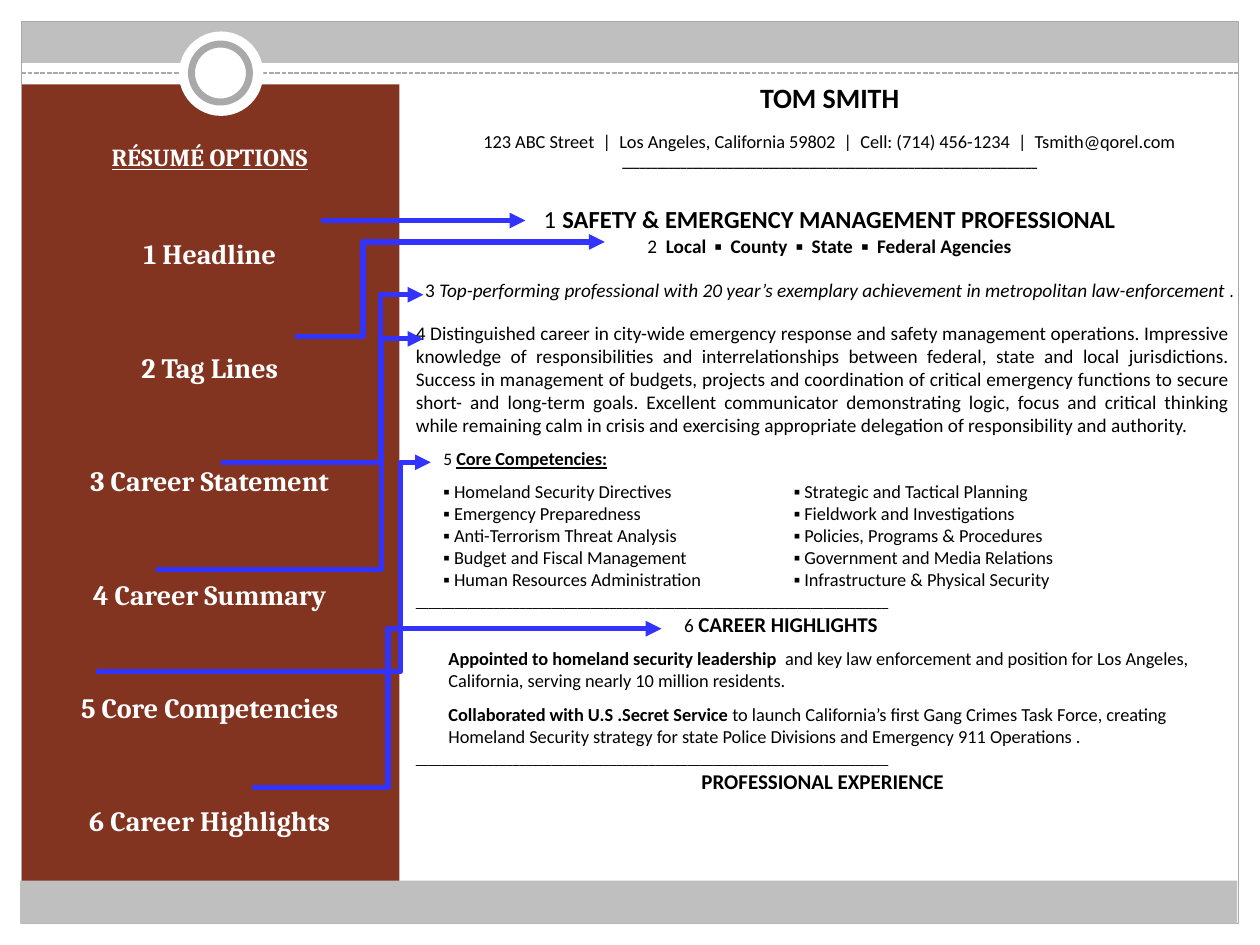
import lxml.etree
import pptx
import pptx.dml.color
import pptx.enum.dml
import pptx.enum.shapes
import pptx.enum.text
import pptx.oxml.ns
import pptx.util

Inches = pptx.util.Inches
Pt = pptx.util.Pt
RGBColor = pptx.dml.color.RGBColor
Shape = pptx.enum.shapes.MSO_SHAPE
Connector = pptx.enum.shapes.MSO_CONNECTOR
Align = pptx.enum.text.PP_ALIGN
qn = pptx.oxml.ns.qn

WHITE = RGBColor(0xFF, 0xFF, 0xFF)
BLACK = RGBColor(0, 0, 0)
SILVER = RGBColor(0xBF, 0xBF, 0xBF)
GREY = RGBColor(0xA9, 0xA9, 0xA9)
RUST = RGBColor(0x83, 0x34, 0x21)
BLUE = RGBColor(0x33, 0x33, 0xFF)

BOLD = {"bold": True}
SANS, SERIF = "Calibri", "Cambria"


class SlideBuilder:
    def __init__(self, page):
        self.page = page

    def shape(self, kind, place, fill=None, line=None, weight=1):
        shape = self.page.shapes.add_shape(kind, *map(Inches, place))
        shape.shadow.inherit = False
        if fill is None:
            shape.fill.background()
        else:
            shape.fill.solid()
            shape.fill.fore_color.rgb = fill
        if line is None:
            shape.line.fill.background()
        else:
            shape.line.color.rgb = line
            shape.line.width = Pt(weight)

    def connector(self, start, end, color, weight, bend=None, arrow=True):
        kind = Connector.STRAIGHT if bend is None else Connector.ELBOW
        line = self.page.shapes.add_connector(kind, *map(Inches, start + end))
        line.line.color.rgb = color
        line.line.width = Pt(weight)
        properties = line._element.spPr
        if bend is not None:
            ratio = round((bend - start[0]) / (end[0] - start[0]) * 100000)
            guides = properties.find(qn("a:prstGeom")).find(qn("a:avLst"))
            lxml.etree.SubElement(guides, qn("a:gd"), name="adj1", fmla=f"val {ratio}")
        if arrow:
            outline = properties.find(qn("a:ln"))
            lxml.etree.SubElement(outline, qn("a:tailEnd"), type="triangle")
        else:
            line.line.dash_style = pptx.enum.dml.MSO_LINE.SQUARE_DOT
        lxml.etree.SubElement(properties, qn("a:effectLst"))

    def text(self, place, paragraphs, color):
        box = self.page.shapes.add_textbox(*map(Inches, place))
        frame = box.text_frame
        frame.word_wrap = True
        for side in ("left", "top", "right", "bottom"):
            setattr(frame, f"margin_{side}", 0)
        for index, (before, align, layout, spans) in enumerate(paragraphs):
            para = frame.add_paragraph() if index else frame.paragraphs[0]
            para.alignment = align
            para.space_before = Pt(before)
            details = para._p.get_or_add_pPr()
            if "indent" in layout:
                details.set("marL", str(Inches(layout["indent"])))
                details.set("indent", "0")
            if "tabs" in layout:
                stops = lxml.etree.SubElement(details, qn("a:tabLst"))
                for stop in layout["tabs"]:
                    lxml.etree.SubElement(stops, qn("a:tab"), pos=str(Inches(stop)), algn="l")
            for words, size, font, extra in spans:
                span = para.add_run()
                span.text = words
                values = {"size": Pt(size), "name": font, **extra}
                for name, value in values.items():
                    setattr(span.font, name, value)
                span.font.color.rgb = color


def add_frame(builder):
    builder.connector((0.17, 0.58), (9.83, 0.58), GREY, 0.9, arrow=False)
    builder.shape(Shape.RECTANGLE, (0.17, 0.17, 9.66, 0.33), SILVER)
    builder.shape(Shape.RECTANGLE, (0.17, 0.67, 3, 6.42), RUST)
    builder.shape(Shape.RECTANGLE, (0.17, 0.17, 9.66, 7.16), line=GREY, weight=0.75)
    builder.shape(Shape.OVAL, (1.42, 0.25, 0.67, 0.67), WHITE)
    builder.shape(Shape.OVAL, (1.52, 0.35, 0.46, 0.46), WHITE, GREY, 4)
    builder.shape(Shape.RECTANGLE, (0.16, 6.99, 9.66, 0.34), SILVER)


def add_header(builder):
    lines = [
        (0, [("TOM SMITH", 16, SANS, BOLD)]),
        (9, [("123 ABC Street  |  Los Angeles, California 59802  |  "
              "Cell: (714) 456-1234  |  Tsmith@qorel.com", 10.5, SANS, {})]),
        (0, [("_" * 71, 9, SERIF, BOLD)]),
        (17, [("1", 14, SANS, {}), (" ", 16, SANS, BOLD),
              ("SAFETY & EMERGENCY MANAGEMENT PROFESSIONAL", 14, SANS, BOLD)]),
        (0, [("2  ", 11, SANS, {}),
             ("Local  ▪  County  ▪  State  ▪  Federal Agencies", 11, SANS, BOLD)]),
        (12, [("3 ", 11, SANS, {}),
              ("Top-performing professional with 20 year’s exemplary achievement "
               "in metropolitan law-enforcement ", 11, SANS, {"italic": True}),
              (".", 11, SERIF, {"italic": True})]),
    ]
    paragraphs = [(before, Align.CENTER, {}, spans) for before, spans in lines]
    builder.text((3.17, 0.64, 6.83, 1.8), paragraphs, BLACK)


def add_sidebar(builder):
    options = ["Headline", "Tag Lines", "Career Statement", "Career Summary",
               "Core Competencies", "Career Highlights"]
    paragraphs = [(0, Align.CENTER, {}, [
        ("RÉSUMÉ OPTIONS", 14, SERIF, {"bold": True, "underline": True})])]
    for number, option in enumerate(options, 1):
        before = 37.3 if number == 1 else 45.6
        paragraphs.append((before, Align.CENTER, {},
                           [(f"{number} {option}", 16, SERIF, BOLD)]))
    builder.text((0.25, 1.13, 2.83, 5.8), paragraphs, WHITE)


def add_body(builder):
    summary = (
        "4 Distinguished career in city-wide emergency response and safety management "
        "operations. Impressive knowledge of responsibilities and interrelationships "
        "between federal, state and local jurisdictions. Success in management of "
        "budgets, projects and coordination of critical emergency functions to secure "
        "short- and long-term goals. Excellent communicator demonstrating logic, focus "
        "and critical thinking while remaining calm in crisis and exercising appropriate "
        "delegation of responsibility and authority.")
    competencies = [
        ("Homeland Security Directives", "Strategic and Tactical Planning"),
        ("Emergency Preparedness", "Fieldwork and Investigations"),
        ("Anti-Terrorism Threat Analysis", "Policies, Programs & Procedures"),
        ("Budget and Fiscal Management", "Government and Media Relations"),
        ("Human Resources Administration", "Infrastructure & Physical Security"),
    ]
    highlights = [
        ("Appointed to homeland security leadership  ",
         "and key law enforcement and position for Los Angeles, California, "
         "serving nearly 10 million residents."),
        ("Collaborated with U.S .Secret Service ",
         "to launch California’s first Gang Crimes Task Force, creating Homeland "
         "Security strategy for state Police Divisions and Emergency 911 Operations ."),
    ]
    rule = (0, Align.LEFT, {}, [("_" * 73, 10, SERIF, {})])
    paragraphs = [
        (0, Align.JUSTIFY, {}, [(summary, 11, SANS, {})]),
        (6, Align.LEFT, {"indent": 0.22}, [
            ("5 ", 10, SANS, {}),
            ("Core Competencies:", 10.5, SANS, {"bold": True, "underline": True})]),
    ]
    for index, (left, right) in enumerate(competencies):
        paragraphs.append((0 if index else 6, Align.LEFT, {"tabs": (0.22, 3)},
                           [(f"\t▪ {left}\t▪ {right}", 10.5, SANS, {})]))
    paragraphs += [rule, (0, Align.LEFT, {"indent": 2.13}, [
        ("6 ", 11, SANS, {}), ("CAREER HIGHLIGHTS", 12, SANS, BOLD)])]
    for lead, detail in highlights:
        paragraphs.append((6.5, Align.LEFT, {"indent": 0.26}, [
            (lead, 10.5, SANS, BOLD), (detail, 10.5, SANS, {})]))
    paragraphs += [rule, (0, Align.CENTER, {}, [
        ("PROFESSIONAL EXPERIENCE", 12, SANS, BOLD)])]
    builder.text((3.3, 2.55, 6.46, 4), paragraphs, BLACK)


def add_arrows(builder):
    arrows = [
        ((2.55, 1.75), (4.17, 1.75), None),
        ((2.34, 2.67), (4.8, 1.92), 2.88),
        ((1.75, 3.67), (3.36, 2.34), 3.02),
        ((0.76, 5.33), (3.42, 3.67), 3.18),
        ((1.24, 4.52), (3.36, 2.69), 3.03),
        ((2, 6.25), (5.25, 4.99), 3.08),
    ]
    for start, end, bend in arrows:
        builder.connector(start, end, BLUE, 3, bend)


def main():
    deck = pptx.Presentation()
    deck.slide_width = Inches(10)
    deck.slide_height = Inches(7.5)
    builder = SlideBuilder(deck.slides.add_slide(deck.slide_layouts[6]))
    add_frame(builder)
    add_header(builder)
    add_sidebar(builder)
    add_body(builder)
    add_arrows(builder)
    deck.save("out.pptx")


if __name__ == "__main__":
    main()
